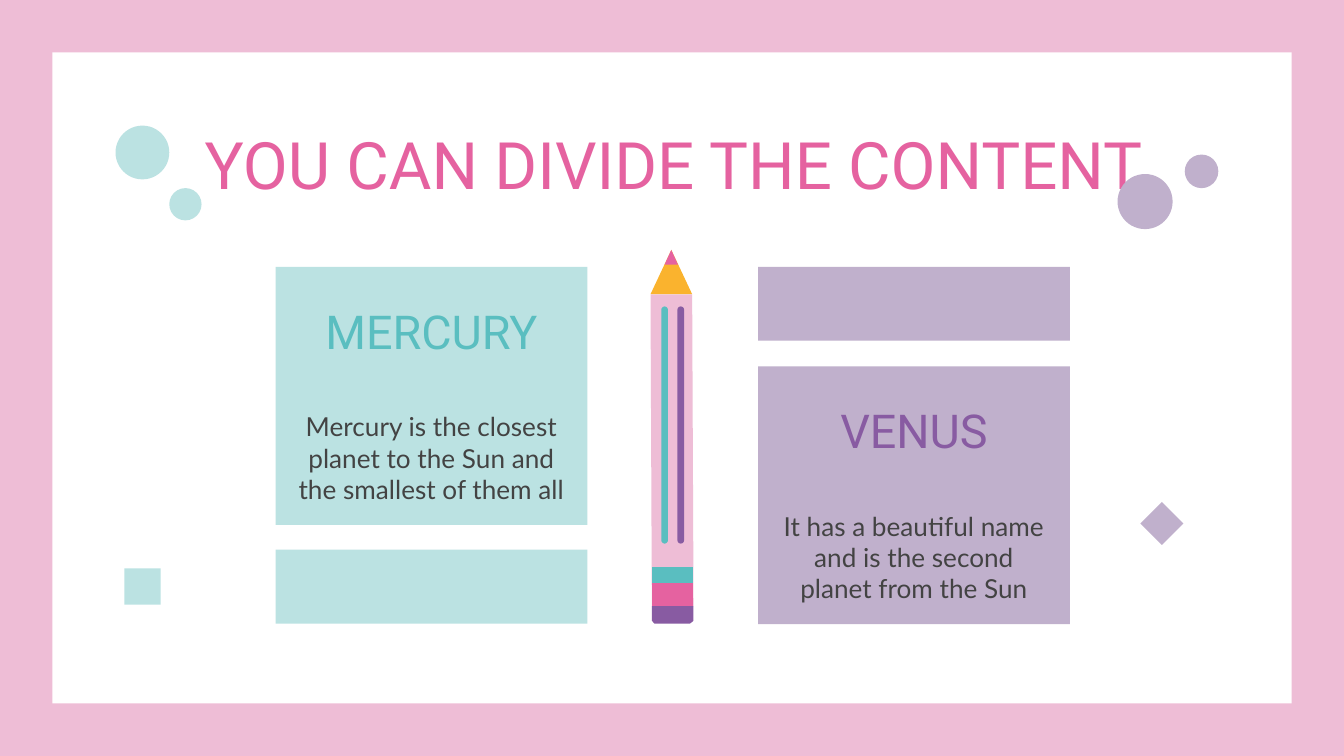
"""Build a two-part content slide with a pencil between the parts."""
from dataclasses import dataclass

from pptx import Presentation
from pptx.dml.color import RGBColor
from pptx.enum.shapes import MSO_SHAPE as Shape
from pptx.enum.text import MSO_ANCHOR as Anchor, MSO_AUTO_SIZE as AutoSize, PP_ALIGN as Align
from pptx.util import Emu, Pt

PX = 4572
COLORS = {
    "blush": "EEBDD6", "white": "FFFFFF", "mint": "BBE2E2", "lilac": "C0B0CC",
    "pink": "E562A0", "teal": "5ABEC0", "purple": "885BA2", "amber": "FAB32E",
    "gray": "434343",
}


@dataclass(frozen=True)
class Box:
    x: int
    y: int
    w: int
    h: int


@dataclass(frozen=True)
class Card:
    box: Box
    bar: Box
    heading_box: Box
    fill: str
    heading: str
    heading_color: str
    body: str


@dataclass(frozen=True)
class Ornament:
    kind: Shape
    box: Box
    fill: str


@dataclass(frozen=True)
class Polygon:
    points: tuple[tuple[int, int], ...]
    fill: str


CARDS = (
    Card(Box(410, 397, 464, 384), Box(410, 818, 464, 110), Box(450, 431, 384, 126),
         "mint", "MERCURY", "teal",
         "Mercury is the closest planet to the Sun and the smallest of them all"),
    Card(Box(1128, 545, 464, 384), Box(1128, 397, 464, 110), Box(1168, 578, 384, 126),
         "lilac", "VENUS", "purple",
         "It has a beautiful name and is the second planet from the Sun"),
)
PENCIL = (
    Polygon(((1030, 438), (968, 438), (970, 902), (1032, 902)), "blush"),
    Polygon(((999, 372), (968, 438), (1030, 438)), "amber"),
    Polygon(((970, 868), (1032, 868), (1032, 902), (970, 902)), "pink"),
    Polygon(((970, 902), (970, 924), (974, 928), (1027, 928), (1032, 924), (1032, 902)),
            "purple"),
    Polygon(((999, 372), (989, 394), (1009, 394)), "pink"),
    Polygon(((970, 844), (1032, 844), (1032, 868), (970, 868)), "teal"),
)
STRIPES = (
    Ornament(Shape.ROUNDED_RECTANGLE, Box(984, 456, 10, 353), "teal"),
    Ornament(Shape.ROUNDED_RECTANGLE, Box(1008, 456, 10, 353), "purple"),
)
ORNAMENTS = (
    Ornament(Shape.OVAL, Box(172, 187, 80, 80), "mint"),
    Ornament(Shape.OVAL, Box(252, 280, 48, 48), "mint"),
    Ornament(Shape.OVAL, Box(1663, 259, 82, 82), "lilac"),
    Ornament(Shape.OVAL, Box(1763, 230, 50, 50), "lilac"),
    Ornament(Shape.RECTANGLE, Box(185, 846, 54, 54), "mint"),
    Ornament(Shape.DIAMOND, Box(1697, 747, 64, 64), "lilac"),
)


def rgb(name: str) -> RGBColor:
    return RGBColor.from_string(COLORS[name])


def emu(box: Box) -> tuple[Emu, ...]:
    return tuple(Emu(v * PX) for v in (box.x, box.y, box.w, box.h))


def paint(sp, fill: str):
    sp.shadow.inherit = False
    sp.fill.solid()
    sp.fill.fore_color.rgb = rgb(fill)
    sp.line.fill.background()
    return sp


def add_shape(s, kind: Shape, box: Box, fill: str):
    return paint(s.shapes.add_shape(kind, *emu(box)), fill)


def add_polygon(s, polygon: Polygon) -> None:
    builder = s.shapes.build_freeform(*polygon.points[0], scale=PX)
    builder.add_line_segments(polygon.points[1:], close=True)
    paint(builder.convert_to_shape(), polygon.fill)


def set_text(sp, text: str, font: str, size: int, color: str,
             anchor: Anchor = Anchor.TOP,
             insets: tuple[int, int, int, int] = (20, 20, 20, 20)) -> None:
    tf = sp.text_frame
    tf.auto_size = AutoSize.NONE
    tf.word_wrap = True
    tf.vertical_anchor = anchor
    tf.margin_left, tf.margin_top, tf.margin_right, tf.margin_bottom = (
        Emu(v * PX) for v in insets)
    p = tf.paragraphs[0]
    p.alignment = Align.CENTER
    r = p.add_run()
    r.text = text
    r.font.name = font
    r.font.size = Pt(size)
    r.font.color.rgb = rgb(color)


def add_card(s, card: Card) -> None:
    sp = add_shape(s, Shape.RECTANGLE, card.box, card.fill)
    set_text(sp, card.body, "Lato", 14, "gray", Anchor.BOTTOM, (30, 50, 30, 30))
    sp.text_frame.paragraphs[0].space_after = Pt(16)
    add_shape(s, Shape.RECTANGLE, card.bar, card.fill)
    heading = s.shapes.add_textbox(*emu(card.heading_box))
    set_text(heading, card.heading, "Roboto", 25, card.heading_color)


def place_title(s, text: str, box: Box) -> None:
    title = s.shapes.title
    title.left, title.top, title.width, title.height = emu(box)
    set_text(title, text, "Roboto", 35, "pink")
    s.shapes._spTree.append(title._element)


def main() -> None:
    prs = Presentation()
    prs.slide_width, prs.slide_height = Emu(2000 * PX), Emu(1125 * PX)
    s = prs.slides.add_slide(prs.slide_layouts[5])
    s.background.fill.solid()
    s.background.fill.fore_color.rgb = rgb("blush")
    add_shape(s, Shape.RECTANGLE, Box(78, 78, 1844, 969), "white")
    place_title(s, "YOU CAN DIVIDE THE CONTENT", Box(172, 165, 1662, 126))
    for card in CARDS:
        add_card(s, card)
    for polygon in PENCIL:
        add_polygon(s, polygon)
    for stripe in STRIPES:
        add_shape(s, stripe.kind, stripe.box, stripe.fill).adjustments[0] = 0.5
    for ornament in ORNAMENTS:
        add_shape(s, ornament.kind, ornament.box, ornament.fill)
    prs.save("out.pptx")


if __name__ == "__main__":
    main()
